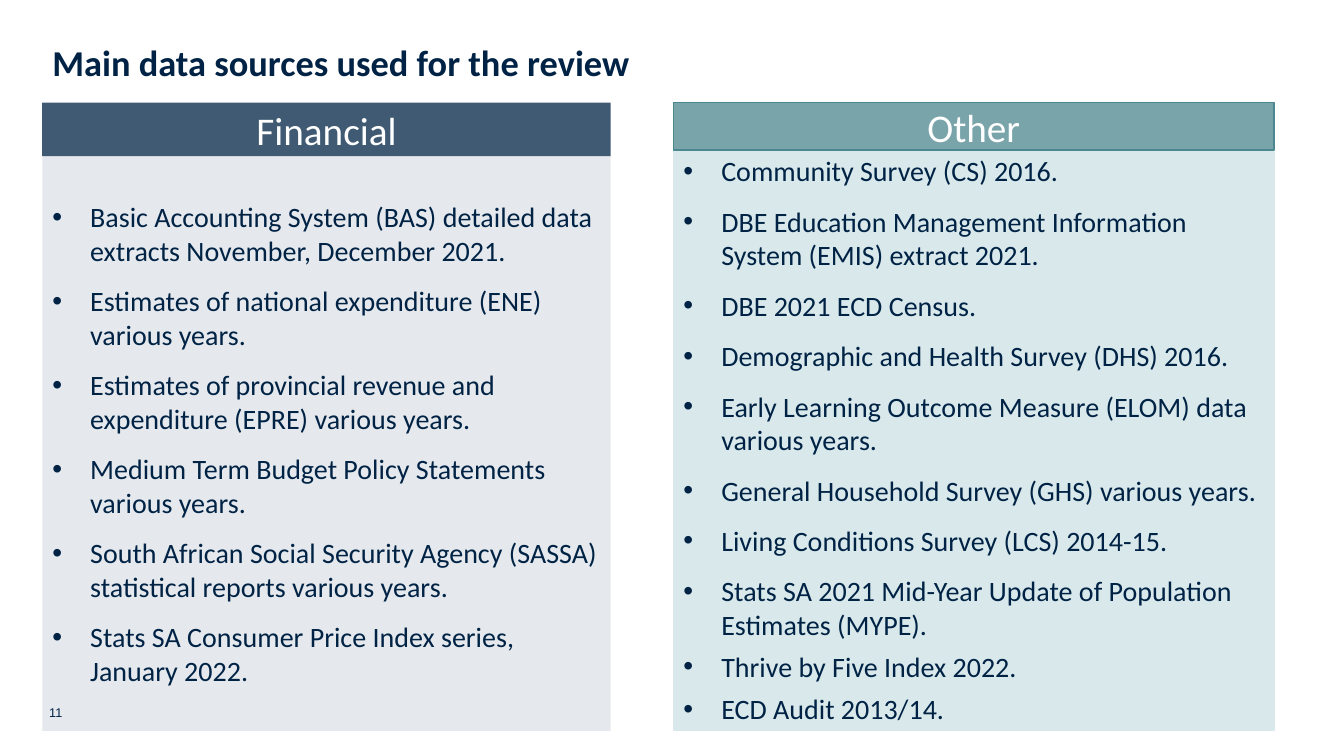
from lxml import etree
from pptx import Presentation
from pptx.dml.color import RGBColor
from pptx.enum import shapes, text
from pptx.oxml import ns
from pptx.util import Pt

COLORS = {"navy": "002345", "teal": "4C868E", "pale": "D9E8EB", "white": "FFFFFF"}


def paint(shape, fill, opacity, line):
    """Fill a shape at a percentage of opacity and outline it, or not if line is None."""
    shape.fill.solid()
    shape.fill.fore_color.rgb = RGBColor.from_string(COLORS[fill])
    if opacity < 100:
        color = shape.fill._xPr.find(".//" + ns.qn("a:srgbClr"))
        etree.SubElement(color, ns.qn("a:alpha"), val=str(opacity * 1000))
    if line:
        shape.line.color.rgb = RGBColor.from_string(COLORS[line])
        shape.line.width = Pt(1)
    else:
        shape.line.fill.background()


def style(paragraph, size, color, face="Calibri", bold=False):
    for run in paragraph.runs:
        run.font.size = Pt(size)
        run.font.name = face
        run.font.bold = bold
        run.font.color.rgb = RGBColor.from_string(COLORS[color])


deck = Presentation()
deck.slide_width, deck.slide_height = Pt(960), Pt(540)
slide = deck.slides.add_slide(deck.slide_layouts[3])

title = slide.shapes.title
title.left, title.top, title.width, title.height = Pt(30.2), Pt(28.8), Pt(902), Pt(77.8)
title.text_frame.text = "Main data sources used for the review"
title.text_frame.vertical_anchor = text.MSO_ANCHOR.TOP
title.text_frame.auto_size = text.MSO_AUTO_SIZE.NONE
heading = title.text_frame.paragraphs[0]
heading.alignment = text.PP_ALIGN.LEFT
heading.line_spacing = 0.9
style(heading, 26, "navy", bold=True)

# The closing items of each list, counted by "tight", sit closer together.
columns = [
    {
        "name": "Financial", "left": 30.2, "width": 406.1, "header_height": 38.2,
        "list_top": 111.6, "list_height": 410.4, "tight": 1,
        "header_paint": ("navy", 75, None), "list_paint": ("navy", 10, None),
        "sources": [
            "Basic Accounting System (BAS) detailed data extracts November, December 2021.",
            "Estimates of national expenditure (ENE) various years.",
            "Estimates of provincial revenue and expenditure (EPRE) various years.",
            "Medium Term Budget Policy Statements various years.",
            "South African Social Security Agency (SASSA) statistical reports various years.",
            "Stats SA Consumer Price Index series, January 2022.",
        ],
    },
    {
        "name": "Other", "left": 481, "width": 429.1, "header_height": 33.8,
        "list_top": 106.6, "list_height": 414.7, "tight": 3,
        "header_paint": ("teal", 75, "teal"), "list_paint": ("pale", 100, "pale"),
        "sources": [
            "Community Survey (CS) 2016.",
            "DBE Education Management Information System (EMIS) extract 2021.",
            "DBE 2021 ECD Census.",
            "Demographic and Health Survey (DHS) 2016.",
            "Early Learning Outcome Measure (ELOM) data various years.",
            "General Household Survey (GHS) various years.",
            "Living Conditions Survey (LCS) 2014-15.",
            "Stats SA 2021 Mid-Year Update of Population Estimates (MYPE).",
            "Thrive by Five Index 2022.",
            "ECD Audit 2013/14.",
        ],
    },
]

for index, column in enumerate(columns, start=1):
    left, width = Pt(column["left"]), Pt(column["width"])
    source_list = slide.placeholders[index]
    source_list.left, source_list.top = left, Pt(column["list_top"])
    source_list.width, source_list.height = width, Pt(column["list_height"])
    paint(source_list, *column["list_paint"])
    frame = source_list.text_frame
    frame.text = "\n".join(column["sources"])
    frame.vertical_anchor = text.MSO_ANCHOR.MIDDLE
    frame.auto_size = text.MSO_AUTO_SIZE.NONE
    loose = len(column["sources"]) - column["tight"]
    for position, source in enumerate(frame.paragraphs):
        properties = source._p.get_or_add_pPr()
        properties.set("marL", str(Pt(27)))
        properties.set("indent", str(Pt(-27)))
        etree.SubElement(properties, ns.qn("a:buFont"), typeface="Arial")
        etree.SubElement(properties, ns.qn("a:buChar"), char="•")
        tabs = etree.SubElement(properties, ns.qn("a:tabLst"))
        etree.SubElement(tabs, ns.qn("a:tab"), pos=str(Pt(175.7)), algn="l")
        source.space_before = Pt(0)
        source.space_after = Pt(12 if position < loose else 6)
        style(source, 20, "navy")

    header = slide.shapes.add_shape(shapes.MSO_SHAPE.RECTANGLE, left, Pt(73.4),
                                    width, Pt(column["header_height"]))
    header.shadow.inherit = False
    paint(header, *column["header_paint"])
    header.text_frame.text = column["name"]
    header.text_frame.vertical_anchor = text.MSO_ANCHOR.MIDDLE
    header.text_frame.paragraphs[0].alignment = text.PP_ALIGN.CENTER
    style(header.text_frame.paragraphs[0], 28, "white")

page_number = slide.shapes.add_textbox(Pt(28.1), Pt(499.7), Pt(113.8), Pt(18))
page_number.text_frame.word_wrap = True
page_number.text_frame.text = "11"
style(page_number.text_frame.paragraphs[0], 9, "navy", face="Arial")

deck.save("out.pptx")
